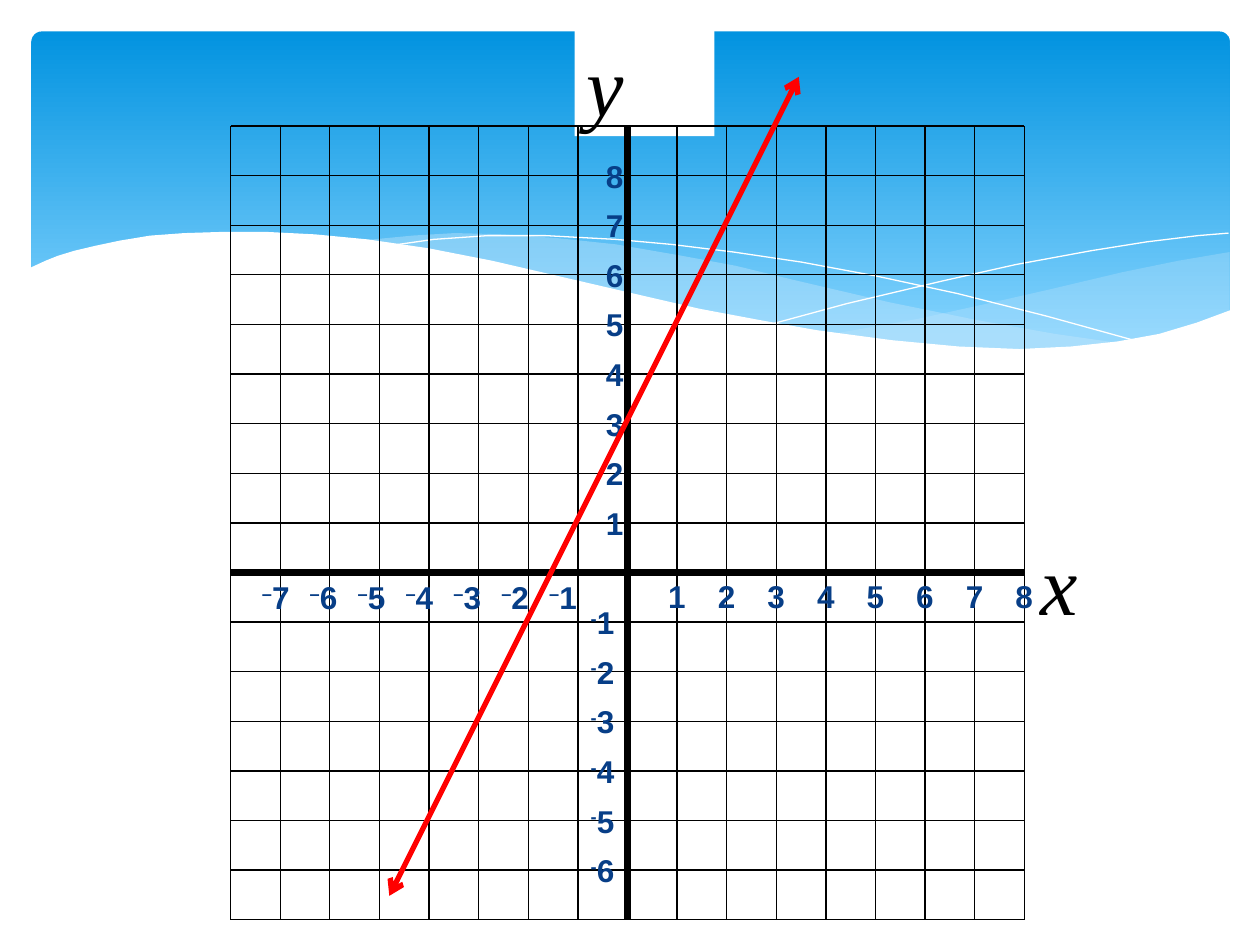
from lxml.etree import SubElement
from pptx import Presentation
from pptx.dml.color import RGBColor
from pptx.enum.shapes import MSO_CONNECTOR, MSO_SHAPE
from pptx.enum.text import MSO_ANCHOR, PP_ALIGN
from pptx.oxml.ns import qn
from pptx.util import Pt

PX = 9144  # EMU per px, 100 px to the inch
COLORS = {
    "sky_top": "0293E0", "sky_bottom": "83D3FE", "wave": "C6E7FC",
    "white": "FFFFFF", "black": "000000", "number": "073E87", "graph": "FF0000",
}
RGB = {name: RGBColor.from_string(value) for name, value in COLORS.items()}

deck = Presentation()
deck.slide_width, deck.slide_height = 1000 * PX, 750 * PX
page = deck.slides.add_slide(deck.slide_layouts[6])
shapes = page.shapes


def add_line(x1, y1, x2, y2, color, points):
    line = shapes.add_connector(
        MSO_CONNECTOR.STRAIGHT, *(round(v * PX) for v in (x1, y1, x2, y2)))
    line.line.color.rgb = RGB[color]
    line.line.width = Pt(points)
    SubElement(line._element.spPr, qn("a:effectLst"))
    return line


def add_number(x, y, width, spans, tabs=(), align="l"):
    """Add a text box of (text, raised) spans with tab stops in px."""
    box = shapes.add_textbox(x * PX, round(y * PX), width * PX, 40 * PX)
    box.text_frame.word_wrap = True
    para = box.text_frame.paragraphs[0]
    para.font.size, para.font.bold, para.font.name = Pt(18), True, "Arial"
    para.font.color.rgb = RGB["number"]
    if tabs:
        tab_list = SubElement(para._p.get_or_add_pPr(), qn("a:tabLst"))
        # Tab stops come before the default run properties
        tab_list.getparent().insert(0, tab_list)
        for tab in tabs:
            SubElement(tab_list, qn("a:tab"), pos=str(round(tab * PX)), algn=align)
    for text, raised in spans:
        span = para.add_run()
        span.text = text
        if raised:
            span._r.get_or_add_rPr().set("baseline", "30000")


# Sky with waves
sky = shapes.add_shape(MSO_SHAPE.ROUNDED_RECTANGLE, 25 * PX, 25 * PX, 951 * PX, 270 * PX)
sky.adjustments[0] = 0.03
sky.shadow.inherit = False
sky.line.fill.background()
sky.fill.gradient()
sky.fill.gradient_angle = 270
for stop, color, position in zip(sky.fill.gradient_stops, ("sky_top", "sky_bottom"), (0, 0.9)):
    stop.color.rgb = RGB[color]
    stop.position = position

right_wave = [
    (976, 200), (935, 207), (891, 216), (832, 230), (779, 242), (729, 253), (661, 265),
    (691, 269), (719, 272), (757, 276), (803, 278), (854, 276), (897, 270), (935, 262),
    (963, 252), (976, 247)]
middle_wave = [
    (893, 273), (837, 265), (775, 254), (706, 240), (629, 222), (584, 211), (541, 203),
    (489, 194), (442, 189), (399, 186), (361, 185), (328, 187), (286, 191), (323, 196),
    (362, 203), (404, 211), (449, 222), (491, 232), (566, 248), (634, 261), (695, 270),
    (748, 276), (796, 278), (838, 278), (876, 275)]
falling_curve = [
    (309, 195), (344, 190), (387, 187), (433, 187), (489, 190), (533, 194), (582, 200),
    (636, 208), (695, 219), (760, 233), (831, 251), (907, 272)]
rising_curve = [
    (613, 257), (672, 241), (748, 223), (806, 210), (866, 199), (910, 192), (951, 187),
    (975, 185)]
ground = [
    (977, 246), (950, 256), (920, 265), (887, 271), (850, 275), (809, 277), (761, 275),
    (708, 270), (648, 262), (603, 254), (555, 245), (503, 233), (447, 220), (391, 207),
    (340, 197), (292, 190), (250, 186), (211, 184), (177, 184), (146, 185), (119, 187),
    (95, 191), (76, 195), (59, 199), (46, 203), (36, 207), (23, 213), (23, 329), (977, 329)]
for points, fill, alpha in (
        (right_wave, "wave", 29), (middle_wave, "wave", 40),
        (falling_curve, None, None), (rising_curve, None, None), (ground, "white", 100)):
    builder = shapes.build_freeform(*points[0], scale=PX)
    builder.add_line_segments(points[1:], close=fill is not None)
    wave = builder.convert_to_shape()
    wave.shadow.inherit = False
    if fill:
        wave.fill.solid()
        wave.fill.fore_color.rgb = RGB[fill]
        wave.line.fill.background()
        color_element = wave._element.spPr.find(".//" + qn("a:srgbClr"))
        SubElement(color_element, qn("a:alpha"), val=str(alpha * 1000))
    else:
        wave.fill.background()
        wave.line.color.rgb = RGB["white"]
        wave.line.width = 0

# Axis names
for name, x, y, width, height in (("y", 456, 13, 111, 95), ("x", 816, 409, 63, 71)):
    box = shapes.add_shape(MSO_SHAPE.RECTANGLE, x * PX, y * PX, width * PX, height * PX)
    box.shadow.inherit = False
    box.fill.solid()
    box.fill.fore_color.rgb = RGB["white"]
    box.line.fill.background()
    frame = box.text_frame
    frame.vertical_anchor = MSO_ANCHOR.TOP
    frame.margin_top = 13 * PX
    para = frame.paragraphs[0]
    para.text = name
    para.alignment = PP_ALIGN.LEFT
    para.font.name, para.font.size, para.font.italic = "Times New Roman", Pt(48), True
    para.font.color.rgb = RGB["black"]

# Grid of 16 by 16 cells
LEFT, TOP, SIDE, CELLS = 183, 100, 630, 16
RIGHT, BOTTOM, STEP = LEFT + SIDE, TOP + SIDE, SIDE / CELLS
origin_x, origin_y = LEFT + 8 * STEP, TOP + 9 * STEP
for i in range(CELLS + 1):
    add_line(LEFT + i * STEP, TOP, LEFT + i * STEP, BOTTOM, "black", 0.75)
    add_line(LEFT, TOP + i * STEP, RIGHT, TOP + i * STEP, "black", 0.75)
add_line(origin_x, TOP, origin_x, BOTTOM, "black", 4.5)
add_line(LEFT, origin_y, RIGHT, origin_y, "black", 4.5)

# Axis numbers
add_number(498, 453, 381, [(f"\t{n}", False) for n in range(1, 9)],
           [n * STEP - 10 for n in range(1, 9)], "ctr")
negatives = []
for n in range(7, 0, -1):
    negatives += [("\t–", True), (str(n), False)]
add_number(170, 454, 328, negatives, [28 + 38 * i for i in range(7)])
for n in range(1, 9):
    add_number(471, origin_y - n * STEP - 20, 54, [(str(n), False)])
for n in range(1, 7):
    add_number(459, origin_y + n * STEP - 20, 54, [("-", True), (str(n), False)])

# Graph of the function
graph = add_line(634, 61, 309, 711, "graph", 3)
outline = graph.line._get_or_add_ln()
for end in ("a:headEnd", "a:tailEnd"):
    SubElement(outline, qn(end), type="arrow")

deck.save("out.pptx")
